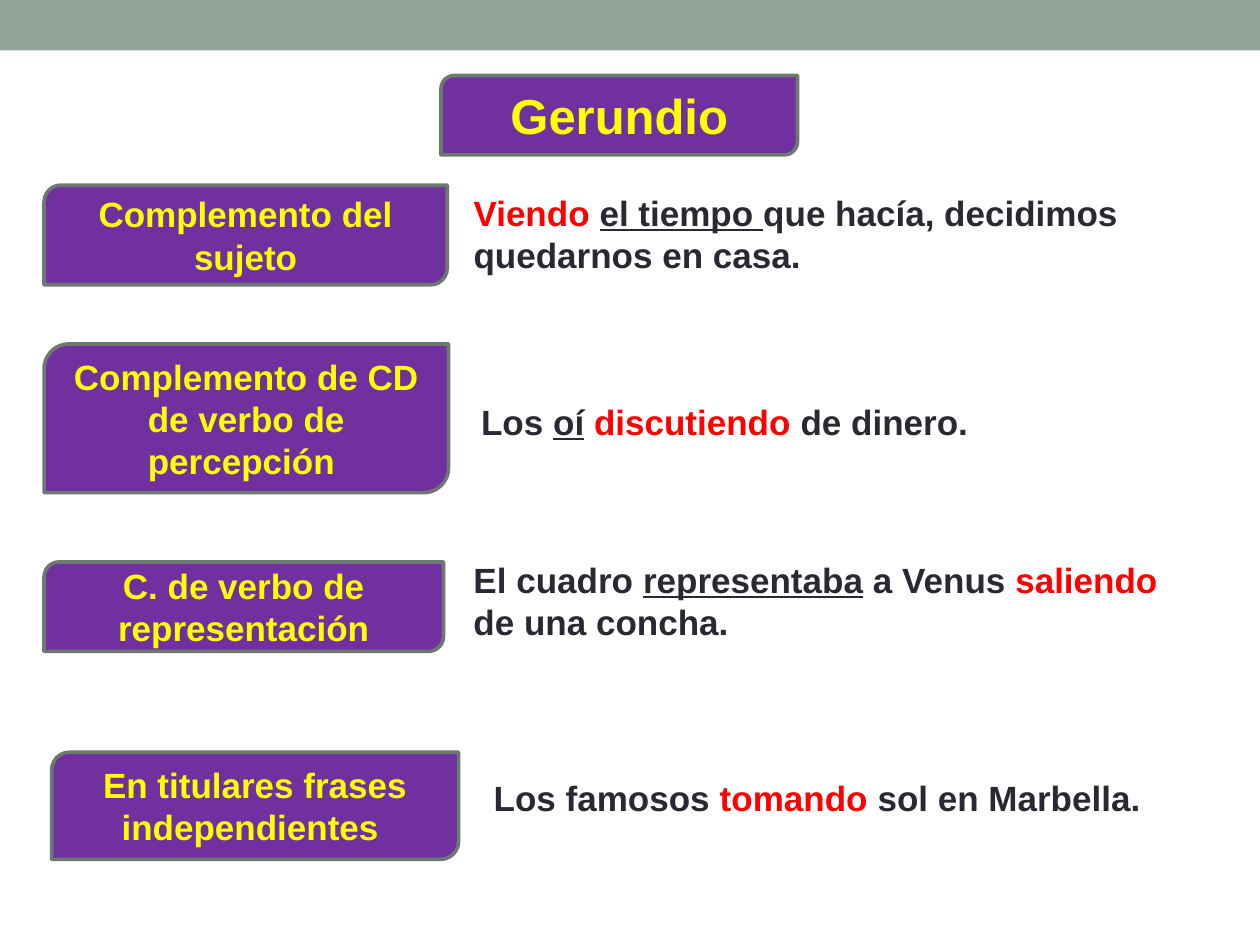
from pptx import Presentation
from pptx.dml.color import RGBColor
from pptx.enum.shapes import MSO_SHAPE
from pptx.enum.text import MSO_ANCHOR, PP_ALIGN
from pptx.util import Inches, Pt

RECTANGLE = MSO_SHAPE.RECTANGLE
DIAGONAL_ROUNDED = MSO_SHAPE.ROUND_2_DIAG_RECTANGLE
MIDDLE = MSO_ANCHOR.MIDDLE
CENTER = PP_ALIGN.CENTER

SAGE = RGBColor(0x93, 0xA2, 0x99)
SAGE_DARK = RGBColor(0x6D, 0x78, 0x71)
PURPLE = RGBColor(0x70, 0x30, 0xA0)
YELLOW = RGBColor(0xFF, 0xFF, 0x00)
RED = RGBColor(0xFF, 0x00, 0x00)
INK = RGBColor(0x29, 0x29, 0x34)

FONT = "Arial"
TITLE_SIZE, BODY_SIZE = 28, 20

# Content: boxes are left, top, width, height in inches
TITLE = ("Gerundio", (3.5, 0.6, 2.83, 0.63))

# Run styles: the gerund is red, the word it depends on is underlined
PLAIN, GERUND, LINKED = (INK, False), (RED, False), (INK, True)

USES = [
    {"label": "Complemento del sujeto",
     "label_box": (0.35, 1.47, 3.2, 0.79),
     "example_box": (3.66, 1.47, 5.35, 0.77),
     "example": [[("Viendo ", GERUND), ("el tiempo ", LINKED),
                  ("que hacía, decidimos", PLAIN)],
                 [("quedarnos en casa.", PLAIN)]]},
    {"label": "Complemento de CD de verbo de percepción ",
     "label_box": (0.35, 2.73, 3.21, 1.18),
     "example_box": (3.72, 3.13, 4.1, 0.44),
     "example": [[("Los ", PLAIN), ("oí", LINKED),
                  (" discutiendo ", GERUND), ("de dinero.", PLAIN)]]},
    {"label": "C. de verbo de representación",
     "label_box": (0.35, 4.46, 3.17, 0.71),
     "example_box": (3.66, 4.38, 6.06, 0.77),
     "example": [[("El cuadro ", PLAIN), ("representaba", LINKED),
                  (" a Venus ", PLAIN), ("saliendo", GERUND)],
                 [("de una concha.", PLAIN)]]},
    {"label": "En titulares frases independientes ",
     "label_box": (0.41, 5.97, 3.23, 0.85),
     "example_box": (3.82, 6.11, 5.54, 0.44),
     "example": [[("Los famosos ", PLAIN), ("tomando ", GERUND),
                  ("sol en Marbella.", PLAIN)]]},
]


def style_font(font, size, color, underline=False):
    font.name = FONT
    font.size = Pt(size)
    font.bold = True
    font.color.rgb = color
    if underline:
        font.underline = True


def add_filled_shape(slide, kind, box, color):
    shape = slide.shapes.add_shape(kind, *map(Inches, box))
    shape.shadow.inherit = False
    shape.fill.solid()
    shape.fill.fore_color.rgb = color
    return shape


def add_label(slide, text, box, size):
    shape = add_filled_shape(slide, DIAGONAL_ROUNDED, box, PURPLE)
    shape.line.color.rgb = SAGE_DARK
    shape.line.width = Pt(2.08)
    text_frame = shape.text_frame
    text_frame.word_wrap = True
    text_frame.vertical_anchor = MIDDLE
    text_frame.text = text
    paragraph = text_frame.paragraphs[0]
    paragraph.alignment = CENTER
    style_font(paragraph.runs[0].font, size, YELLOW)


def add_example(slide, lines, box):
    text_frame = slide.shapes.add_textbox(*map(Inches, box)).text_frame
    text_frame.word_wrap = True
    for index, line in enumerate(lines):
        paragraph = text_frame.add_paragraph() if index else text_frame.paragraphs[0]
        for text, (color, underline) in line:
            run = paragraph.add_run()
            run.text = text
            style_font(run.font, BODY_SIZE, color, underline)


def main():
    presentation = Presentation()
    presentation.slide_width = Inches(10)
    presentation.slide_height = Inches(7.5)
    slide = presentation.slides.add_slide(presentation.slide_layouts[6])

    # Top band and title
    band = add_filled_shape(slide, RECTANGLE, (0, 0, 10, 0.4), SAGE)
    band.line.fill.background()
    add_label(slide, *TITLE, TITLE_SIZE)

    # Each use of the gerund with its example
    for use in USES:
        add_label(slide, use["label"], use["label_box"], BODY_SIZE)
        add_example(slide, use["example"], use["example_box"])

    presentation.save("out.pptx")


if __name__ == "__main__":
    main()
